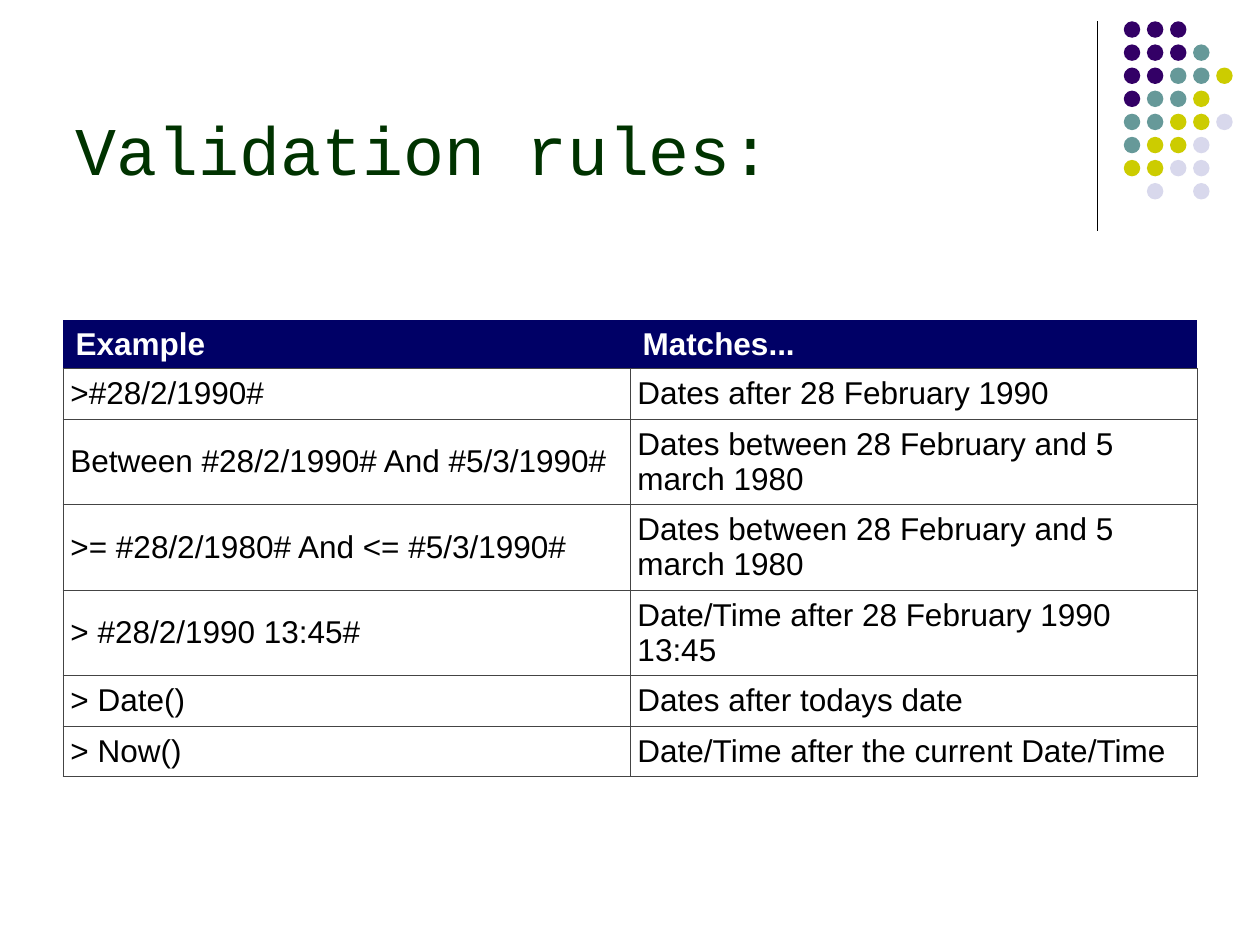
from lxml import etree
from pptx import Presentation
from pptx.dml.color import RGBColor
from pptx.enum import shapes, text
from pptx.oxml import ns
from pptx.util import Pt

BLACK = RGBColor(0x00, 0x00, 0x00)
WHITE = RGBColor(0xFF, 0xFF, 0xFF)
NAVY = RGBColor(0x00, 0x00, 0x66)
GREEN = RGBColor(0x00, 0x33, 0x00)
BORDER_GREY = RGBColor(0x44, 0x44, 0x44)
DOT_COLORS = {
    "P": RGBColor(0x33, 0x00, 0x66),
    "T": RGBColor(0x66, 0x99, 0x99),
    "Y": RGBColor(0xCC, 0xCC, 0x00),
    "L": RGBColor(0xD8, 0xD8, 0xEC),
}

DOT_ROWS = ["PPP", "PPPT", "PPTTY", "PTTY", "TTYYL", "TYYL", "YYLL", " L L"]
DOT_LEFT, DOT_TOP, DOT_SIZE, DOT_PITCH = 642.2, 12.2, 9.4, 13.2

RULES = [
    ("Example", "Matches..."),
    (">#28/2/1990#", "Dates after 28 February 1990"),
    ("Between #28/2/1990# And #5/3/1990#", "Dates between 28 February and 5 march 1980"),
    (">= #28/2/1980# And <= #5/3/1990#", "Dates between 28 February and 5 march 1980"),
    ("> #28/2/1990 13:45#", "Date/Time after 28 February 1990 13:45"),
    ("> Date()", "Dates after todays date"),
    ("> Now()", "Date/Time after the current Date/Time"),
]
ROW_HEIGHTS = [27.7, 28.6, 48.7, 48.7, 48.7, 28.6, 28.6]


def set_format(target, values):
    for name, value in values.items():
        setattr(target, name, value)


def set_borders(cell, visible_edges):
    """Draw the listed edges (letters from LRTB) and clear the others."""
    properties = cell._tc.get_or_add_tcPr()
    for edge in "LRTB":
        line = etree.SubElement(properties, ns.qn(f"a:ln{edge}"), w=str(Pt(0.6)))
        if edge in visible_edges:
            fill = etree.SubElement(line, ns.qn("a:solidFill"))
            etree.SubElement(fill, ns.qn("a:srgbClr"), val=str(BORDER_GREY))
        else:
            etree.SubElement(line, ns.qn("a:noFill"))


presentation = Presentation()
set_format(presentation, {"slide_width": Pt(720), "slide_height": Pt(540)})
slide = presentation.slides.add_slide(presentation.slide_layouts[5])

# Corner decoration
divider = slide.shapes.add_connector(
    shapes.MSO_CONNECTOR.STRAIGHT, Pt(627.1), Pt(12.2), Pt(627.1), Pt(131.8))
divider.line.color.rgb = BLACK
divider.line.width = Pt(0.75)
etree.SubElement(divider._element.spPr, ns.qn("a:effectLst"))

dots = slide.shapes.add_group_shape()
for row, pattern in enumerate(DOT_ROWS):
    for column, key in enumerate(pattern):
        if key == " ":
            continue
        dot = dots.shapes.add_shape(
            shapes.MSO_SHAPE.OVAL,
            Pt(DOT_LEFT + column * DOT_PITCH), Pt(DOT_TOP + row * DOT_PITCH),
            Pt(DOT_SIZE), Pt(DOT_SIZE))
        dot.shadow.inherit = False
        dot.fill.solid()
        dot.fill.fore_color.rgb = DOT_COLORS[key]
        dot.line.fill.background()

# Rules table
table = slide.shapes.add_table(
    len(RULES), 2, Pt(36), Pt(183), Pt(648), Pt(sum(ROW_HEIGHTS))).table
set_format(table, {"first_row": True, "horz_banding": False})
body_margins = {f"margin_{side}": Pt(4.3) for side in ("left", "right", "top", "bottom")}
for row, (texts, height) in enumerate(zip(RULES, ROW_HEIGHTS)):
    table.rows[row].height = Pt(height)
    is_header = row == 0
    for column, words in enumerate(texts):
        cell = table.cell(row, column)
        set_borders(cell, "B" if is_header else "LRTB")
        if is_header:
            cell.fill.solid()
            cell.fill.fore_color.rgb = NAVY
        else:
            cell.fill.background()
            set_format(cell, body_margins)
        set_format(cell, {"text": words, "vertical_anchor": text.MSO_ANCHOR.MIDDLE})
        font = cell.text_frame.paragraphs[0].runs[0].font
        set_format(font, {"name": "Arial", "size": Pt(18), "bold": is_header})
        font.color.rgb = WHITE if is_header else BLACK

# Title
title = slide.shapes.title
set_format(title, {"left": Pt(36), "top": Pt(9.4), "width": Pt(594), "height": Pt(102.2)})
set_format(title.text_frame, {
    "text": "Validation rules:",
    "word_wrap": True,
    "auto_size": text.MSO_AUTO_SIZE.NONE,
    "vertical_anchor": text.MSO_ANCHOR.BOTTOM,
})
paragraph = title.text_frame.paragraphs[0]
paragraph.alignment = text.PP_ALIGN.LEFT
title_font = paragraph.runs[0].font
set_format(title_font, {"name": "Courier New", "size": Pt(39)})
title_font.color.rgb = GREEN

presentation.save("out.pptx")
